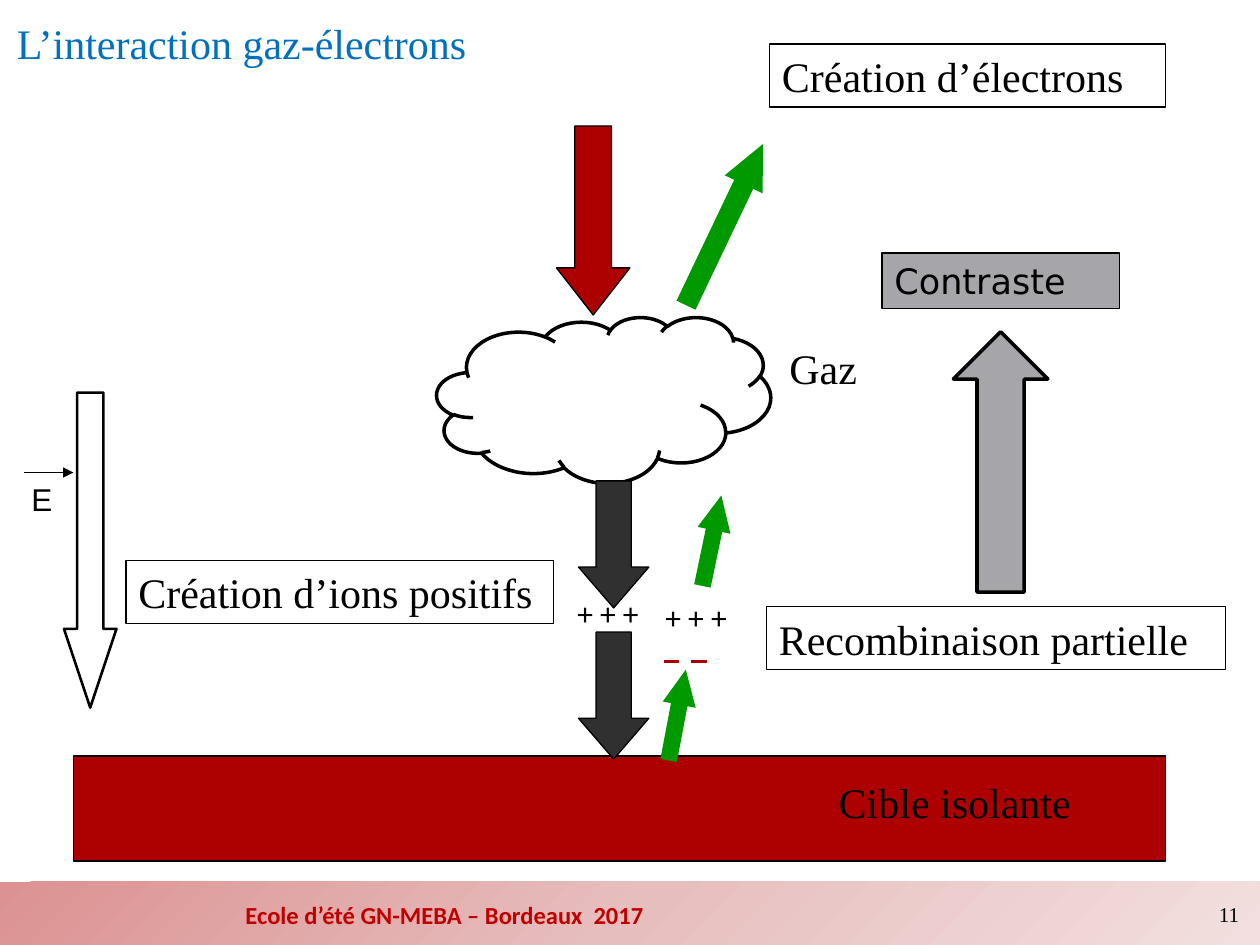
import copy

import pptx
import pptx.dml.color
import pptx.enum.dml
import pptx.enum.shapes
import pptx.enum.text
import pptx.oxml.ns
import pptx.util
from lxml import etree

SHAPE = pptx.enum.shapes.MSO_SHAPE
ALIGN = pptx.enum.text.PP_ALIGN
ANCHOR = pptx.enum.text.MSO_ANCHOR
qn = pptx.oxml.ns.qn

COLUMNS = 120
BLACK, RED, GREEN, DARK, GREY = "000000", "AD0101", "009900", "303030", "A5A5AA"
SERIF = "Times New Roman"

TITLE = ("L’interaction gaz-électrons", (0.4, 1.1, 57.6, 6))
FOOTER_BAND = (0, 84, 120, 6)
FOOTER_COLORS = ["DC9292", "E7BEBE", "F3DFDF"]
FOOTER = ("Ecole d’été GN-MEBA – Bordeaux  2017", (22.2, 85.1, 40.6, 4.1))
PAGE_NUMBER = ("11", (91.2, 84.7, 28, 4.8))

BEAM = (SHAPE.DOWN_ARROW, (53, 12, 7, 18), RED, 0.75, (0.5, 0.64))
TARGET = (SHAPE.RECTANGLE, (7, 72, 104, 10), RED, 0.75, ())
FIELD = (SHAPE.DOWN_ARROW, (6.1, 37.4, 5, 30), None, 1.5, (0.5, 1.5))
GAS_CLOUD = (SHAPE.CLOUD, (41.6, 30.2, 31.8, 15.8), "FFFFFF", 2, ())
CONTRAST_ARROW = (SHAPE.UP_ARROW, (90.8, 31.6, 9, 24.8), GREY, 2, ())
ION_ARROWS = [
    (SHAPE.DOWN_ARROW, (55.1, row, 6.7, 12.1), DARK, 0.75, (0.5, 0.58))
    for row in (45.8, 60.2)
]
ELECTRON_ARROWS = [
    ((60.5, 19.4, 17, 4), 295.5),
    ((60.1, 66.5, 8.8, 3.2), 280.7),
    ((63.4, 49.9, 8.8, 3.2), 281.8),
]
BOXED_LABELS = [
    ("Création d’électrons", (73.3, 4.2, 37.7, 6), None, 24, SERIF),
    ("Recombinaison partielle", (73, 57.8, 43.7, 6), None, 24, SERIF),
    ("Contraste", (84, 24.1, 22.6, 5.3), GREY, 20, "DejaVu Sans"),
    ("Création d’ions positifs", (12, 53.4, 40.7, 6), None, 24, SERIF),
]
LABELS = [
    ("Cible isolante", (78.7, 73.4, 28, 6), 24, SERIF),
    ("Gaz", (74, 32, 18, 6), 24, SERIF),
    ("E", (1.8, 45.1, 8.5, 4.8), 18, "Arial"),
    ("+ + +", (53.8, 56, 9.8, 4.8), 18, "Calibri"),
    ("+ + +", (62.2, 56.4, 9.8, 4.8), 18, "Calibri"),
]
FIELD_VECTOR = (2.3, 7, 45)
ELECTRON_DASHES = (63.2, 68.2, 63)

deck = pptx.Presentation()
deck.slide_width = pptx.util.Inches(10)
deck.slide_height = pptx.util.Inches(7.5)
slide = deck.slides.add_slide(deck.slide_layouts[5])


def grid(*cells):
    return [round(cell * deck.slide_width / COLUMNS) for cell in cells]


def rgb(color):
    return pptx.dml.color.RGBColor.from_string(color)


def write(holder, text, size, face, color=BLACK, bold=False,
          align=ALIGN.LEFT, anchor=ANCHOR.TOP, wrap=True):
    frame = holder.text_frame
    frame.text = text
    frame.word_wrap = wrap
    frame.vertical_anchor = anchor
    frame.auto_size = pptx.enum.text.MSO_AUTO_SIZE.NONE
    paragraph = frame.paragraphs[0]
    paragraph.alignment = align
    font = paragraph.runs[0].font
    font.size = pptx.util.Pt(size)
    font.name = face
    font.bold = bold
    font.color.rgb = rgb(color)


def add_label(text, place, size, face, **style):
    write(slide.shapes.add_textbox(*grid(*place)), text, size, face, **style)


def add_figure(kind, place, fill, line_width, adjustments=()):
    figure = slide.shapes.add_shape(kind, *grid(*place))
    figure.shadow.inherit = False
    for index, value in enumerate(adjustments):
        figure.adjustments[index] = value
    if fill:
        figure.fill.solid()
        figure.fill.fore_color.rgb = rgb(fill)
    else:
        figure.fill.background()
    if line_width:
        figure.line.width = pptx.util.Pt(line_width)
        figure.line.color.rgb = rgb(BLACK)
    else:
        figure.line.fill.background()
    return figure


def add_line(start, end, row, color, width):
    line = slide.shapes.add_connector(
        pptx.enum.shapes.MSO_CONNECTOR.STRAIGHT, *grid(start, row, end, row))
    line.line.color.rgb = rgb(color)
    line.line.width = pptx.util.Pt(width)
    etree.SubElement(line._element.spPr, qn("a:effectLst"))
    return line


def add_footer():
    band = add_figure(SHAPE.RECTANGLE, FOOTER_BAND, None, 0)
    band.fill.gradient()
    band.fill.gradient_angle = 315
    stops = band._element.spPr.find(qn("a:gradFill")).find(qn("a:gsLst"))
    stops.insert(1, copy.deepcopy(stops[0]))
    for index, stop in enumerate(band.fill.gradient_stops):
        stop.position = index / (len(FOOTER_COLORS) - 1)
        stop.color.rgb = rgb(FOOTER_COLORS[index])
    add_label(*FOOTER, 14, "Calibri", color="C00000", bold=True, wrap=False)
    add_label(*PAGE_NUMBER, 12, SERIF, align=ALIGN.RIGHT, anchor=ANCHOR.MIDDLE)


heading, heading_place = TITLE
title = slide.shapes.title
title.left, title.top, title.width, title.height = grid(*heading_place)
write(title, heading, 24, SERIF, color="0070C0")

add_footer()
for figure in (BEAM, TARGET, FIELD, GAS_CLOUD, *ION_ARROWS, CONTRAST_ARROW):
    add_figure(*figure)
for place, angle in ELECTRON_ARROWS:
    add_figure(SHAPE.RIGHT_ARROW, place, GREEN, 0, (0.5, 1.06)).rotation = angle
for text, place, fill, size, face in BOXED_LABELS:
    write(add_figure(SHAPE.RECTANGLE, place, fill, 0.75), text, size, face)
for label in LABELS:
    add_label(*label)

vector = add_line(*FIELD_VECTOR, BLACK, 0.75)
etree.SubElement(vector.line._get_or_add_ln(), qn("a:tailEnd"), type="triangle")
dashes = add_line(*ELECTRON_DASHES, "AA0000", 2.25)
dashes.line.dash_style = pptx.enum.dml.MSO_LINE.DASH

deck.save("out.pptx")
